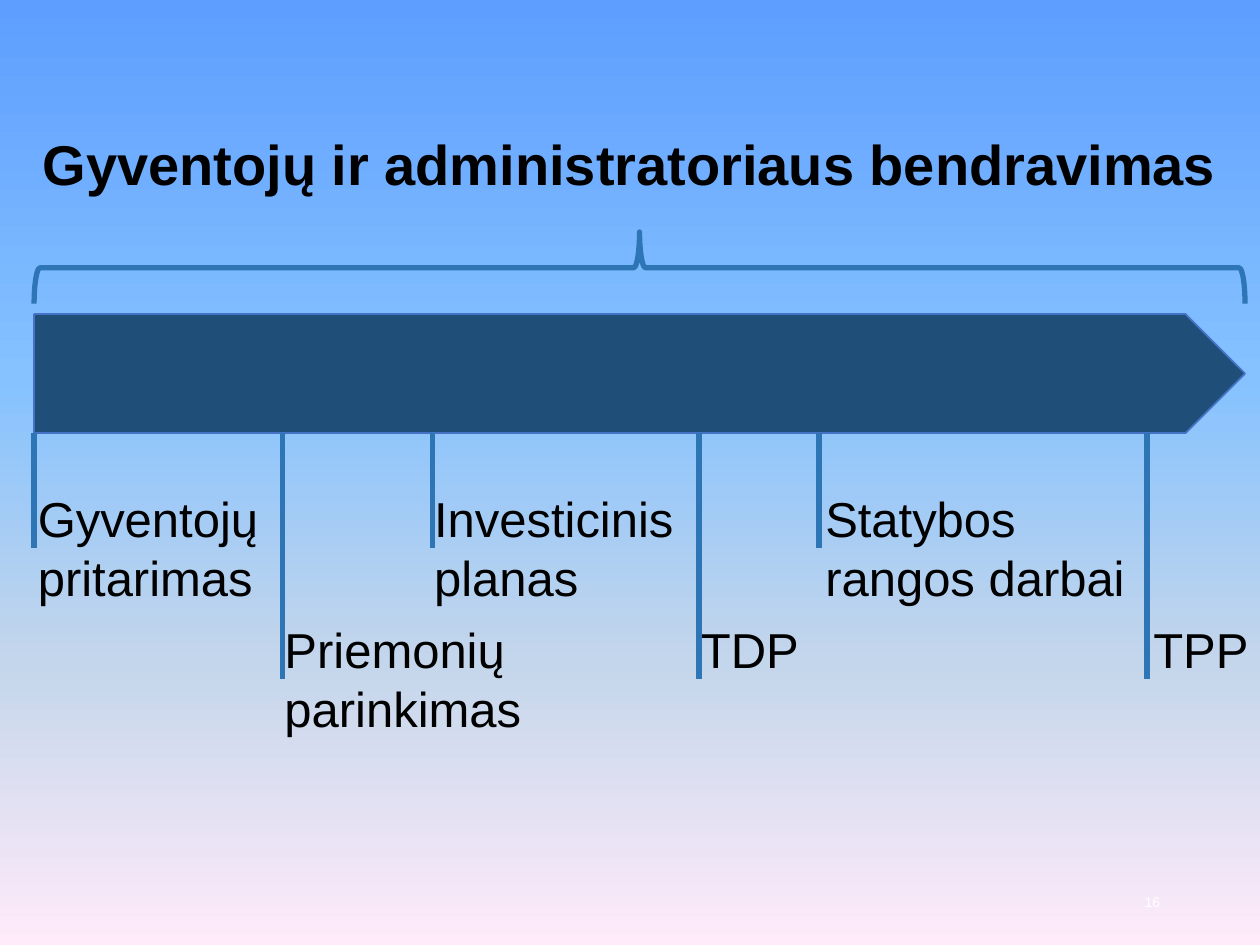
import pptx
import pptx.dml.color
import pptx.enum.shapes
import pptx.enum.text
import pptx.oxml
import pptx.oxml.ns
import pptx.util

Pt = pptx.util.Pt
RGB = pptx.dml.color.RGBColor
SHAPE = pptx.enum.shapes.MSO_SHAPE
ALIGN = pptx.enum.text.PP_ALIGN
ANCHOR = pptx.enum.text.MSO_ANCHOR

BLACK = RGB(0x00, 0x00, 0x00)
WHITE = RGB(0xFF, 0xFF, 0xFF)
NAVY = RGB(0x1F, 0x4E, 0x79)
EDGE = RGB(0x44, 0x72, 0xC4)
BLUE = RGB(0x2E, 0x75, 0xB6)
SKY = [
    (0, RGB(0x5E, 0x9E, 0xFF)),
    (40, RGB(0x85, 0xC2, 0xFF)),
    (70, RGB(0xC4, 0xD6, 0xEB)),
    (100, RGB(0xFF, 0xEB, 0xFA)),
]

FONT = "Arial"
HIGH = (65.5, 28)
LOW = (140.5, 103)
STAGES = [
    ("Gyventojų pritarimas", 0, -5, 142, HIGH),
    ("Priemonių parinkimas", 142, -6, 153, LOW),
    ("Investicinis planas", 227.5, -6, 153, HIGH),
    ("TDP", 380, -6, 72, LOW),
    ("Statybos rangos darbai", 448.5, -3.5, 187, HIGH),
    ("TPP", 636, -3.5, 91, LOW),
]


def format_text(sp, text, size, color, bold=False, align=ALIGN.LEFT):
    """Write one wrapped, top-anchored paragraph."""
    tf = sp.text_frame
    tf.text = text
    tf.word_wrap = True
    tf.vertical_anchor = ANCHOR.TOP
    p = tf.paragraphs[0]
    p.alignment = align
    font = p.runs[0].font
    font.name = FONT
    font.size = Pt(size)
    font.bold = bold
    font.color.rgb = color


def add_label(s, text, x, y, w, h, size, color):
    """Add a text box with one label."""
    sp = s.shapes.add_textbox(Pt(x), Pt(y), Pt(w), Pt(h))
    format_text(sp, text, size, color)


def paint_background(s):
    """Fill the background with a gradient from top to bottom."""
    fill = s.background.fill
    fill.gradient()
    fill.gradient_angle = 270
    stops = s.element.find(".//" + pptx.oxml.ns.qn("a:gsLst"))
    for stop in list(stops):
        stops.remove(stop)
    for percent, color in SKY:
        stops.append(pptx.oxml.parse_xml(
            f'<a:gs {pptx.oxml.ns.nsdecls("a")} pos="{percent * 1000}">'
            f'<a:srgbClr val="{color}"/></a:gs>'))


def place_title(s, x, y, w, h):
    """Move and format the title placeholder."""
    sp = s.shapes.title
    sp.left, sp.top, sp.width, sp.height = Pt(x), Pt(y), Pt(w), Pt(h)
    format_text(sp, "Gyventojų ir administratoriaus bendravimas", 32, BLACK,
                bold=True, align=ALIGN.CENTER)


def add_brace(s, x, y, w, h):
    """Span the box with a brace that points up."""
    sp = s.shapes.add_shape(SHAPE.RIGHT_BRACE, Pt(x + (w - h) / 2),
                            Pt(y + (h - w) / 2), Pt(h), Pt(w))
    sp.rotation = 270
    sp.shadow.inherit = False
    sp.fill.background()
    sp.line.color.rgb = BLUE
    sp.line.width = Pt(3)


def add_tick(s, x, y, length):
    """Drop a vertical line from a point."""
    line = s.shapes.add_connector(pptx.enum.shapes.MSO_CONNECTOR.STRAIGHT,
                                  Pt(x), Pt(y), Pt(x), Pt(y + length))
    line.line.color.rgb = BLUE
    line.line.width = Pt(3)
    line.element.spPr.append(pptx.oxml.parse_xml(
        f'<a:effectLst {pptx.oxml.ns.nsdecls("a")}/>'))


def add_timeline(s, x, y, w, h):
    """Draw the arrow bar with its stages hanging below it."""
    sp = s.shapes.add_shape(SHAPE.PENTAGON, Pt(x), Pt(y), Pt(w), Pt(h))
    sp.shadow.inherit = False
    sp.fill.solid()
    sp.fill.fore_color.rgb = NAVY
    sp.line.color.rgb = EDGE
    sp.line.width = Pt(1)
    bottom = y + h
    for text, offset, shift, width, (length, drop) in STAGES:
        height = 75 if " " in text else 41
        add_label(s, text, x + offset + shift, bottom + drop, width, height,
                  28, BLACK)
        add_tick(s, x + offset, bottom, length)


def main():
    """Build and save the slide."""
    prs = pptx.Presentation()
    prs.slide_width, prs.slide_height = Pt(720), Pt(540)
    s = prs.slides.add_slide(prs.slide_layouts[5])
    paint_background(s)
    place_title(s, 0, 70.5, 720, 46)
    add_brace(s, 19.5, 132.5, 692, 41)
    add_timeline(s, 19.5, 179.5, 692, 68)
    add_label(s, "16", 647, 507, 36, 18, 8, WHITE)
    prs.save("out.pptx")


if __name__ == "__main__":
    main()
